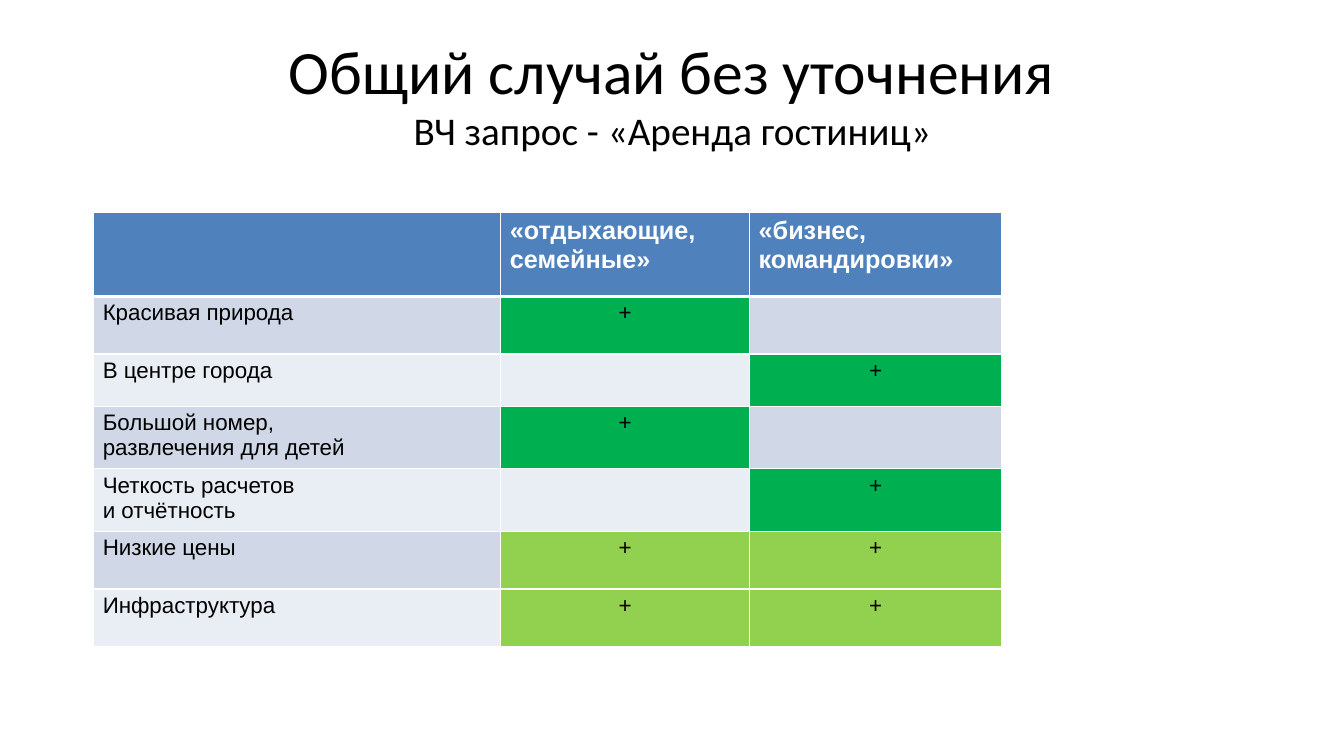
from lxml import etree
from pptx import Presentation, util as u
from pptx.dml.color import RGBColor
from pptx.enum import text
from pptx.oxml import ns

COLORS = {
    "white": "FFFFFF",
    "black": "000000",
    "header": "4F81BD",
    "odd_row": "D0D8E8",
    "even_row": "E9EDF4",
    "specific": "00B050",
    "shared": "92D050",
}
COLUMN_WIDTHS = [10.26, 6.27, 6.35]
ROW_HEIGHTS = [2.11, 1.45, 1.32, 1.55, 1.57, 1.45, 1.45]
HEADER = ["", "«отдыхающие, семейные»", "«бизнес, командировки»"]
NEEDS = [
    ("Красивая природа", "+", ""),
    ("В центре города", "", "+"),
    ("Большой номер,\vразвлечения для детей", "+", ""),
    ("Четкость расчетов\vи отчётность", "", "+"),
    ("Низкие цены", "+", "+"),
    ("Инфраструктура", "+", "+"),
]


def rgb(name):
    return RGBColor.from_string(COLORS[name])


class SlideBuilder:
    table_font = "Arial"
    title_font = "Calibri"

    def __init__(self, slide):
        self.slide = slide

    def title(self, left, top, width, height, lines):
        """Add centred lines, given as (words, size), in one paragraph."""
        box = self.slide.shapes.add_textbox(u.Cm(left), u.Cm(top), u.Cm(width), u.Cm(height))
        frame = box.text_frame
        frame.word_wrap = True
        frame.vertical_anchor = text.MSO_ANCHOR.MIDDLE
        paragraph = frame.paragraphs[0]
        paragraph.alignment = text.PP_ALIGN.CENTER
        paragraph.font.name = self.title_font
        for index, (words, size) in enumerate(lines):
            if index:
                paragraph.add_line_break()
            run = paragraph.add_run()
            run.text = words
            run.font.name = self.title_font
            run.font.size = u.Pt(size)
            run.font.color.rgb = rgb("black")

    def table(self, left, top, widths, heights):
        frame = self.slide.shapes.add_table(
            len(heights), len(widths), u.Cm(left), u.Cm(top),
            u.Cm(sum(widths)), u.Cm(sum(heights)))
        table = frame.table
        for column, width in zip(table.columns, widths):
            column.width = u.Cm(width)
        for row, height in zip(table.rows, heights):
            row.height = u.Cm(height)
        return table

    def borders(self, cell, **points):
        """Draw white cell borders; points overrides the width of a side."""
        properties = cell._tc.get_or_add_tcPr()
        for side in "LRTB":
            width = u.Pt(points.get(side, 1))
            line = etree.SubElement(properties, ns.qn(f"a:ln{side}"), w=str(width))
            fill = etree.SubElement(line, ns.qn("a:solidFill"))
            etree.SubElement(fill, ns.qn("a:srgbClr"), val=COLORS["white"])

    def cell(self, cell, words, fill, size=16, color="black", bold=False, **border_points):
        self.borders(cell, **border_points)
        cell.fill.solid()
        cell.fill.fore_color.rgb = rgb(fill)
        cell.margin_left = cell.margin_right = u.Cm(0.23)
        cell.margin_top = cell.margin_bottom = u.Cm(0.11)
        cell.text = words
        paragraph = cell.text_frame.paragraphs[0]
        if words == "+":
            paragraph.alignment = text.PP_ALIGN.CENTER
        font = paragraph.font
        font.name = self.table_font
        font.size = u.Pt(size)
        font.bold = bold
        font.color.rgb = rgb(color)


def main():
    presentation = Presentation()
    presentation.slide_width = u.Cm(33.87)
    presentation.slide_height = u.Cm(19.05)
    builder = SlideBuilder(presentation.slides.add_slide(presentation.slide_layouts[6]))

    builder.title(1.7, 0.76, 30.48, 3.18, [
        ("Общий случай без уточнения", 44),
        ("ВЧ запрос - «Аренда гостиниц»", 28),
    ])

    table = builder.table(2.36, 5.36, COLUMN_WIDTHS, ROW_HEIGHTS)
    for column, words in enumerate(HEADER):
        builder.cell(table.cell(0, column), words, "header",
                     size=18, color="white", bold=True, B=3)
    for row, need in enumerate(NEEDS, start=1):
        band = "odd_row" if row % 2 else "even_row"
        mark = "shared" if need.count("+") == 2 else "specific"
        for column, words in enumerate(need):
            builder.cell(table.cell(row, column), words,
                         mark if words == "+" else band, T=3 if row == 1 else 1)

    presentation.save("out.pptx")


if __name__ == "__main__":
    main()
